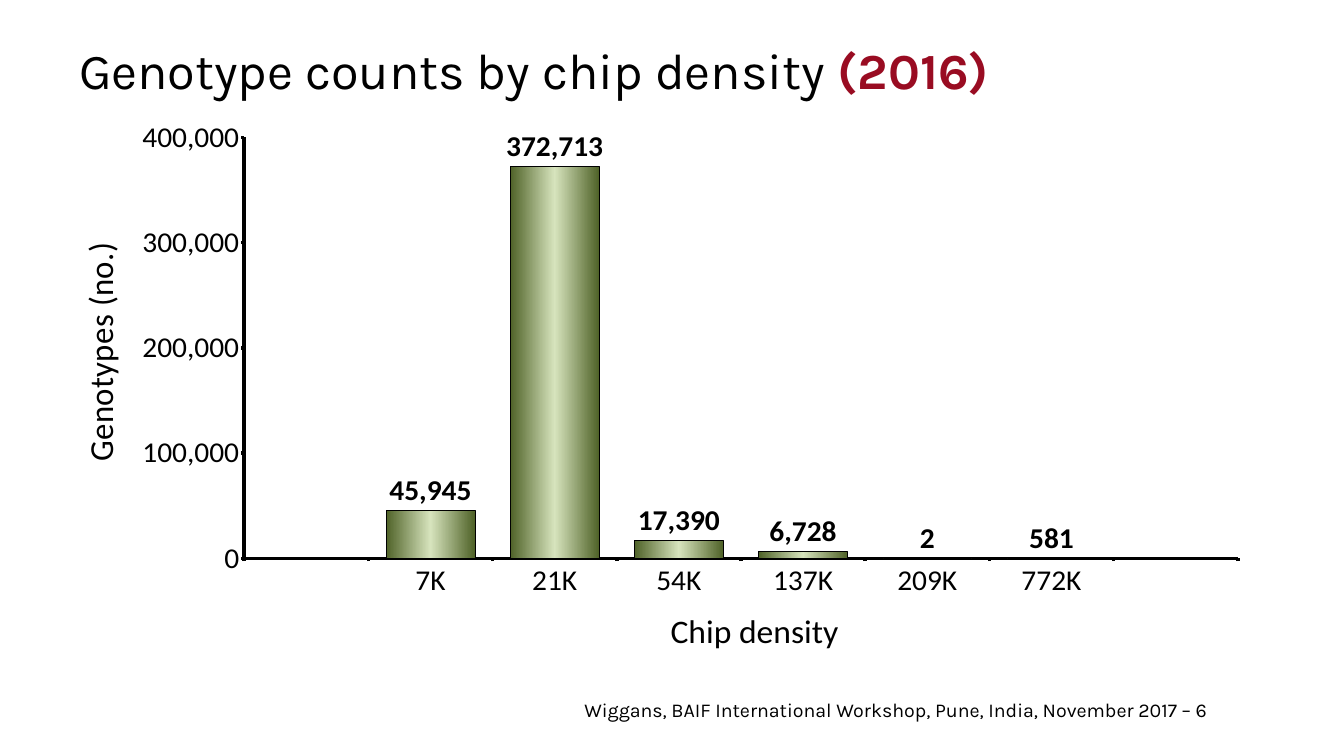
from dataclasses import dataclass

from lxml import etree
from pptx import Presentation
from pptx.chart.data import CategoryChartData
from pptx.dml.color import RGBColor
from pptx.enum.chart import XL_CHART_TYPE, XL_LABEL_POSITION, XL_TICK_MARK
from pptx.enum.text import MSO_ANCHOR
from pptx.oxml import parse_xml
from pptx.oxml.ns import nsdecls, qn
from pptx.util import Inches, Pt

COLUMN = XL_CHART_TYPE.COLUMN_CLUSTERED
OUT_END = XL_LABEL_POSITION.OUTSIDE_END
TICK_OUT, TICK_NONE = XL_TICK_MARK.OUTSIDE, XL_TICK_MARK.NONE
TOP, MIDDLE = MSO_ANCHOR.TOP, MSO_ANCHOR.MIDDLE

# Content; the last count is an empty slot with no chip
TITLE = [("Genotype counts by chip density ", False), ("(2016)", True)]
FOOTER = [("Wiggans, BAIF International Workshop, Pune, India, November 2017 – 6", False)]
CHIPS = ["", "7K", "21K", "54K", "137K", "209K", "772K"]
COUNTS = [None, 45945, 372713, 17390, 6728, 2, 581, None]
X_TITLE, Y_TITLE = "Chip density", "Genotypes (no.)"
NUMBER = "#,##0"

# Layout in px: left, top, width, height
WIDE, HIGH = Inches(26.65), Inches(15)
TITLE_BOX = (67, 13, 1209, 113)
CHART_BOX = (56, 120, 1218, 542)
FOOTER_BOX = (579, 695, 702, 29)
PLOT = (244, 137, 993, 431)
X_SPOT = (664, 613)
Y_SPOT = (71, 244)
EMU = 914400 / 50.4


@dataclass(frozen=True)
class Theme:
    ink: str = "000000"
    accent: str = "990C22"
    bar: tuple = ((0, "4F6228"), (50, "D7E4BD"), (100, "4F6228"))
    face: str = "Karla"
    chart_face: str = "Calibri"
    title: int = 72
    footer: int = 28
    axis: int = 48
    label: int = 42
    axis_line: float = 5
    bar_line: float = 0.75


THEME = Theme()


def px(*sizes):
    return [round(size * EMU) for size in sizes]


def style(font, size, face=THEME.chart_face, bold=False, color=THEME.ink):
    font.name, font.size, font.bold = face, Pt(size), bold
    font.color.rgb = RGBColor.from_string(color)


def add_text(slide, runs, box, size, anchor=TOP, inset=(5, 3)):
    """Add one paragraph; runs flagged strong are bold in the accent colour."""
    frame = slide.shapes.add_textbox(*px(*box)).text_frame
    frame.word_wrap = True
    frame.vertical_anchor = anchor
    side, edge = px(*inset)
    frame.margin_left = frame.margin_right = side
    frame.margin_top = frame.margin_bottom = edge
    for text, strong in runs:
        run = frame.paragraphs[0].add_run()
        run.text = text
        style(run.font, size, face=THEME.face, bold=strong,
              color=THEME.accent if strong else THEME.ink)


def set_line(line, width):
    line.color.rgb = RGBColor.from_string(THEME.ink)
    line.width = Pt(width)


def place(part, index, box, **modes):
    """Fix a chart part at a px box, stored as shares of the chart."""
    for old in part.findall(qn("c:layout")):
        part.remove(old)
    left, top, width, height = CHART_BOX
    starts, spans = (left, top, 0, 0), (width, height, width, height)
    shares = {name: f"{(at - start) / span:.4f}"
              for name, at, start, span in zip("xywh", box, starts, spans)}
    layout = etree.Element(qn("c:layout"))
    manual = etree.SubElement(layout, qn("c:manualLayout"))
    for name, value in {**modes, "xMode": "edge", "yMode": "edge", **shares}.items():
        etree.SubElement(manual, qn(f"c:{name}")).set("val", value)
    part.insert(index, layout)


def set_axis(axis, title, spot):
    axis.has_major_gridlines = False
    axis.major_tick_mark, axis.minor_tick_mark = TICK_OUT, TICK_NONE
    set_line(axis.format.line, THEME.axis_line)
    style(axis.tick_labels.font, THEME.label)
    frame = axis.axis_title.text_frame
    frame.text = title
    style(frame.paragraphs[0].runs[0].font, THEME.axis)
    place(axis.axis_title._element, 1, spot)


def set_bars(series):
    fill = series.format.fill
    fill.gradient()
    fill.gradient_angle = 0
    stops = "".join(f'<a:gs pos="{at * 1000}"><a:srgbClr val="{color}"/></a:gs>'
                    for at, color in THEME.bar)
    old = next(series._element.iter(qn("a:gsLst")))
    old.getparent().replace(old, parse_xml(f'<a:gsLst {nsdecls("a")}>{stops}</a:gsLst>'))
    set_line(series.format.line, THEME.bar_line)


def add_counts(slide):
    data = CategoryChartData(number_format=NUMBER)
    data.categories = CHIPS
    data.add_series("Series 1", COUNTS)
    chart = slide.shapes.add_chart(COLUMN, *px(*CHART_BOX), data).chart
    chart.has_title = chart.has_legend = False
    style(chart.font, THEME.label, bold=True)
    place(chart._chartSpace.chart.plotArea, 0, PLOT, layoutTarget="inner")

    # Axes
    set_axis(chart.category_axis, X_TITLE, X_SPOT)
    scale = chart.value_axis
    set_axis(scale, Y_TITLE, Y_SPOT)
    scale.minimum_scale, scale.maximum_scale, scale.major_unit = 0, 400000, 100000
    scale.tick_labels.number_format = NUMBER
    scale.tick_labels.number_format_is_linked = False

    # Bars and their labels
    plot = chart.plots[0]
    plot.gap_width = 40
    plot.vary_by_categories = False
    set_bars(plot.series[0])
    plot.has_data_labels = True
    labels = plot.data_labels
    labels.show_value = True
    labels.position = OUT_END
    labels.number_format, labels.number_format_is_linked = NUMBER, False
    style(labels.font, THEME.label, bold=True)


def main():
    deck = Presentation()
    deck.slide_width, deck.slide_height = WIDE, HIGH
    slide = deck.slides.add_slide(deck.slide_layouts[6])
    add_text(slide, FOOTER, FOOTER_BOX, THEME.footer)
    add_text(slide, TITLE, TITLE_BOX, THEME.title, anchor=MIDDLE, inset=(12, 6))
    add_counts(slide)
    deck.save("out.pptx")


if __name__ == "__main__":
    main()
